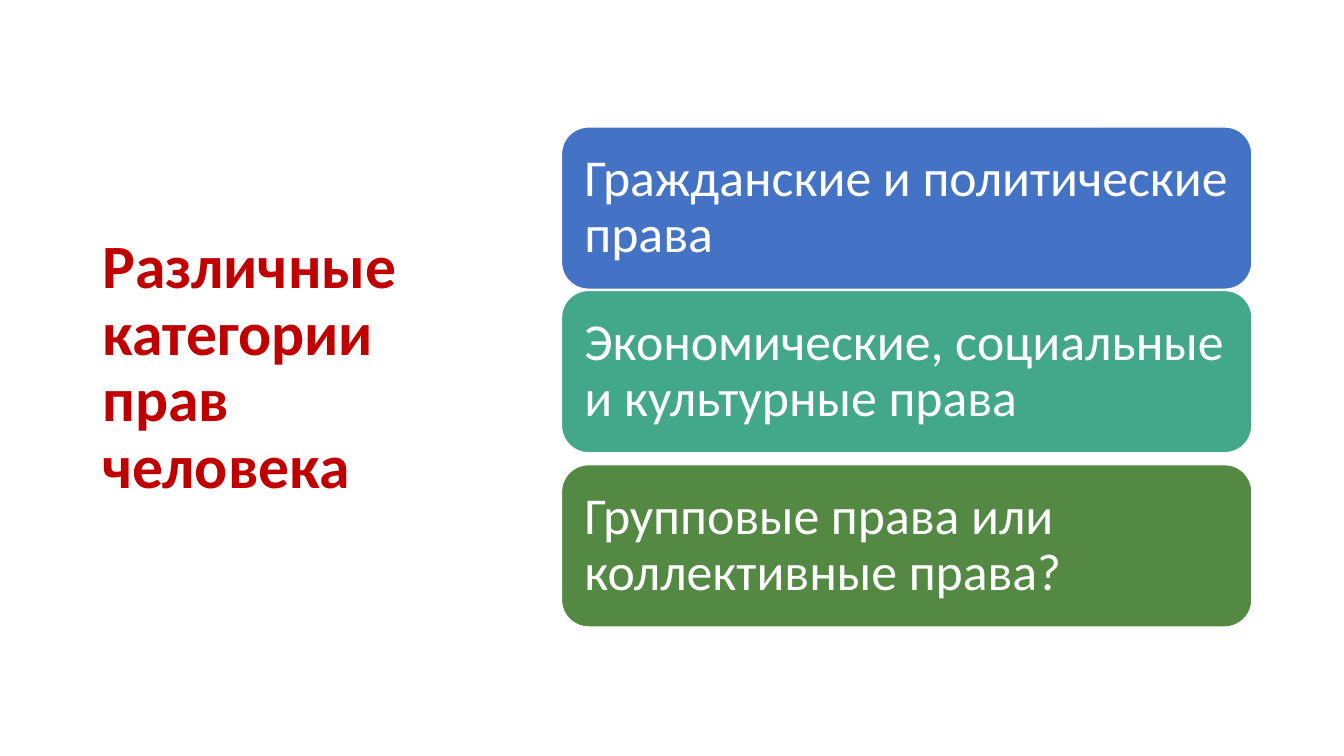
"""Build a slide that lists the categories of human rights."""
from dataclasses import dataclass

from pptx import Presentation
from pptx.dml.color import RGBColor
from pptx.enum.shapes import MSO_SHAPE
from pptx.enum.text import MSO_ANCHOR, PP_ALIGN
from pptx.util import Cm, Pt

ROUNDED = MSO_SHAPE.ROUNDED_RECTANGLE
MIDDLE = MSO_ANCHOR.MIDDLE
LEFT = PP_ALIGN.LEFT

TITLE = "Различные категории прав человека"
CATEGORIES = [
    {"text": "Гражданские и политические права", "fill": "4472C4", "top": 3.2},
    {"text": "Экономические, социальные и культурные права", "fill": "42A889", "top": 7.32},
    {"text": "Групповые права или коллективные права?", "fill": "538943", "top": 11.71},
]
TITLE_AREA = (2.33, 1.55, 9.38, 15.47)
BOX_LEFT, BOX_WIDTH, BOX_HEIGHT = 14.15, 17.4, 4.09
BOX_MARGIN = 0.38


@dataclass(frozen=True)
class Theme:
    font: str = "Calibri"
    title_size: int = 44
    box_size: int = 37
    title_color: str = "C00000"
    light: str = "FFFFFF"
    line_spacing: float = 0.9
    border: int = 1


THEME = Theme()


def write(shape, text, size, color, bold=False):
    frame = shape.text_frame
    frame.text = text
    frame.word_wrap = True
    frame.vertical_anchor = MIDDLE
    para = frame.paragraphs[0]
    para.alignment = LEFT
    para.line_spacing = THEME.line_spacing
    span = para.runs[0]
    span.font.name = THEME.font
    span.font.size = Pt(size)
    span.font.bold = bold
    span.font.color.rgb = RGBColor.from_string(color)


def add_title(page):
    title = page.shapes.title
    title.left, title.top, title.width, title.height = map(Cm, TITLE_AREA)
    write(title, TITLE, THEME.title_size, THEME.title_color, bold=True)


def add_category(page, category):
    area = map(Cm, (BOX_LEFT, category["top"], BOX_WIDTH, BOX_HEIGHT))
    box = page.shapes.add_shape(ROUNDED, *area)
    box.shadow.inherit = False
    box.fill.solid()
    box.fill.fore_color.rgb = RGBColor.from_string(category["fill"])
    box.line.color.rgb = RGBColor.from_string(THEME.light)
    box.line.width = Pt(THEME.border)
    frame = box.text_frame
    frame.margin_left = frame.margin_right = Cm(BOX_MARGIN)
    frame.margin_top = frame.margin_bottom = Cm(BOX_MARGIN)
    write(box, category["text"], THEME.box_size, THEME.light)


def main():
    deck = Presentation()
    deck.slide_width, deck.slide_height = Cm(33.87), Cm(19.05)
    page = deck.slides.add_slide(deck.slide_layouts.get_by_name("Title Only"))
    add_title(page)
    for category in CATEGORIES:
        add_category(page, category)
    deck.save("out.pptx")


if __name__ == "__main__":
    main()
